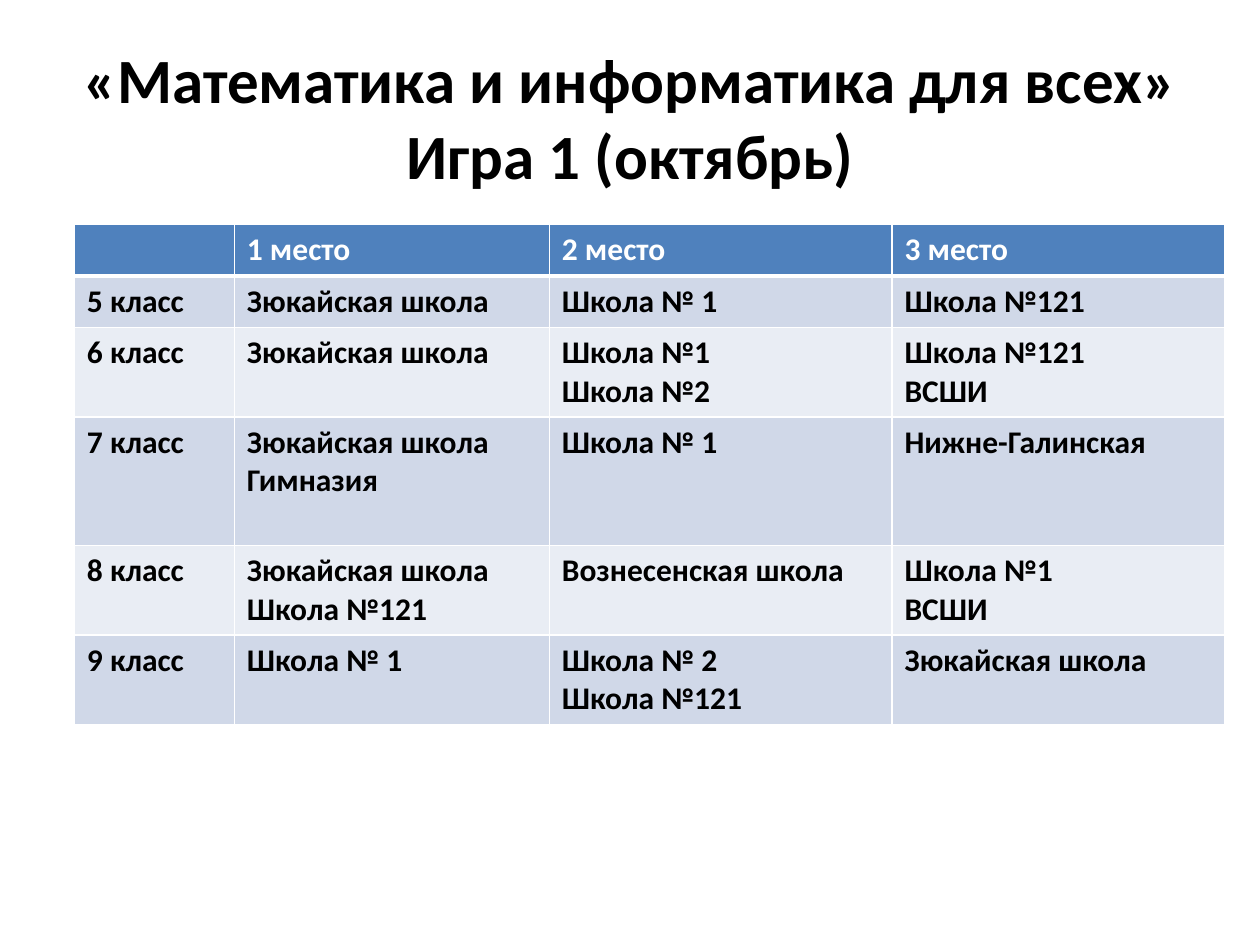
import copy

import pptx
import pptx.dml.color
import pptx.enum.text
import pptx.oxml
import pptx.oxml.ns
import pptx.util
from pptx.util import Inches

HEADING = "«Математика и информатика для всех»\nИгра 1 (октябрь)"
RESULTS = [
    [[""], ["1 место"], ["2 место"], ["3 место"]],
    [["5 класс"], ["Зюкайская школа"], ["Школа № 1"], ["Школа №121"]],
    [["6 класс"], ["Зюкайская школа"], ["Школа №1", "Школа №2"], ["Школа №121", "ВСШИ"]],
    [["7 класс"], ["Зюкайская школа", "Гимназия"], ["Школа № 1"], ["Нижне-Галинская"]],
    [["8 класс"], ["Зюкайская школа", "Школа №121"], ["Вознесенская школа"], ["Школа №1", "ВСШИ"]],
    [["9 класс"], ["Школа № 1"], ["Школа № 2", "Школа №121"], ["Зюкайская школа"]],
]
COLUMN_WIDTHS = [1.27, 2.5, 2.72, 2.64]
ROW_HEIGHTS = [0.41, 0.41, 0.71, 1.02, 0.71, 0.71]
COLORS = {"header": "4F81BD", "odd": "D0D8E8", "even": "E9EDF4",
          "line": "FFFFFF", "light": "FFFFFF", "dark": "000000"}


def rgb(name):
    return pptx.dml.color.RGBColor.from_string(COLORS[name])


def write(frame, lines, size=18, color="dark", align=None):
    for index, line in enumerate(lines):
        paragraph = frame.add_paragraph() if index else frame.paragraphs[0]
        paragraph.text = line.replace("\n", "\v")
        paragraph.alignment = align
        for run in paragraph.runs:
            run.font.name = "Calibri"
            run.font.size = pptx.util.Pt(size)
            run.font.bold = True
            run.font.color.rgb = rgb(color)
        for line_break in paragraph._p.findall(pptx.oxml.ns.qn("a:br")):
            line_break.append(copy.deepcopy(paragraph.runs[0]._r.rPr))


def add_borders(cell, **widths):
    properties = cell._tc.get_or_add_tcPr()
    for side in "LRTB":
        properties.append(pptx.oxml.parse_xml(
            f'<a:ln{side} {pptx.oxml.ns.nsdecls("a")} w="{pptx.util.Pt(widths.get(side, 1))}">'
            f'<a:solidFill><a:srgbClr val="{COLORS["line"]}"/></a:solidFill></a:ln{side}>'))


def main():
    presentation = pptx.Presentation()
    presentation.slide_width, presentation.slide_height = Inches(10), Inches(7.5)
    slide = presentation.slides.add_slide(presentation.slide_layouts[5])

    heading = slide.shapes.title
    heading.left, heading.top = Inches(0.5), Inches(0.3)
    heading.width, heading.height = Inches(9), Inches(1.25)
    heading.text_frame.vertical_anchor = pptx.enum.text.MSO_ANCHOR.MIDDLE
    write(heading.text_frame, [HEADING], size=36, align=pptx.enum.text.PP_ALIGN.CENTER)

    standings = slide.shapes.add_table(
        len(RESULTS), len(COLUMN_WIDTHS), Inches(0.59), Inches(1.78),
        Inches(sum(COLUMN_WIDTHS)), Inches(sum(ROW_HEIGHTS))).table
    for column, width in zip(standings.columns, COLUMN_WIDTHS):
        column.width = Inches(width)
    for row, height in zip(standings.rows, ROW_HEIGHTS):
        row.height = Inches(height)

    for row_index, places in enumerate(RESULTS):
        is_header = row_index == 0
        band = "header" if is_header else ("even", "odd")[row_index % 2]
        for column_index, schools in enumerate(places):
            cell = standings.cell(row_index, column_index)
            add_borders(cell, B=3 if is_header else 1, T=3 if row_index == 1 else 1)
            cell.fill.solid()
            cell.fill.fore_color.rgb = rgb(band)
            write(cell.text_frame, schools, color="light" if is_header else "dark")

    presentation.save("out.pptx")


if __name__ == "__main__":
    main()
